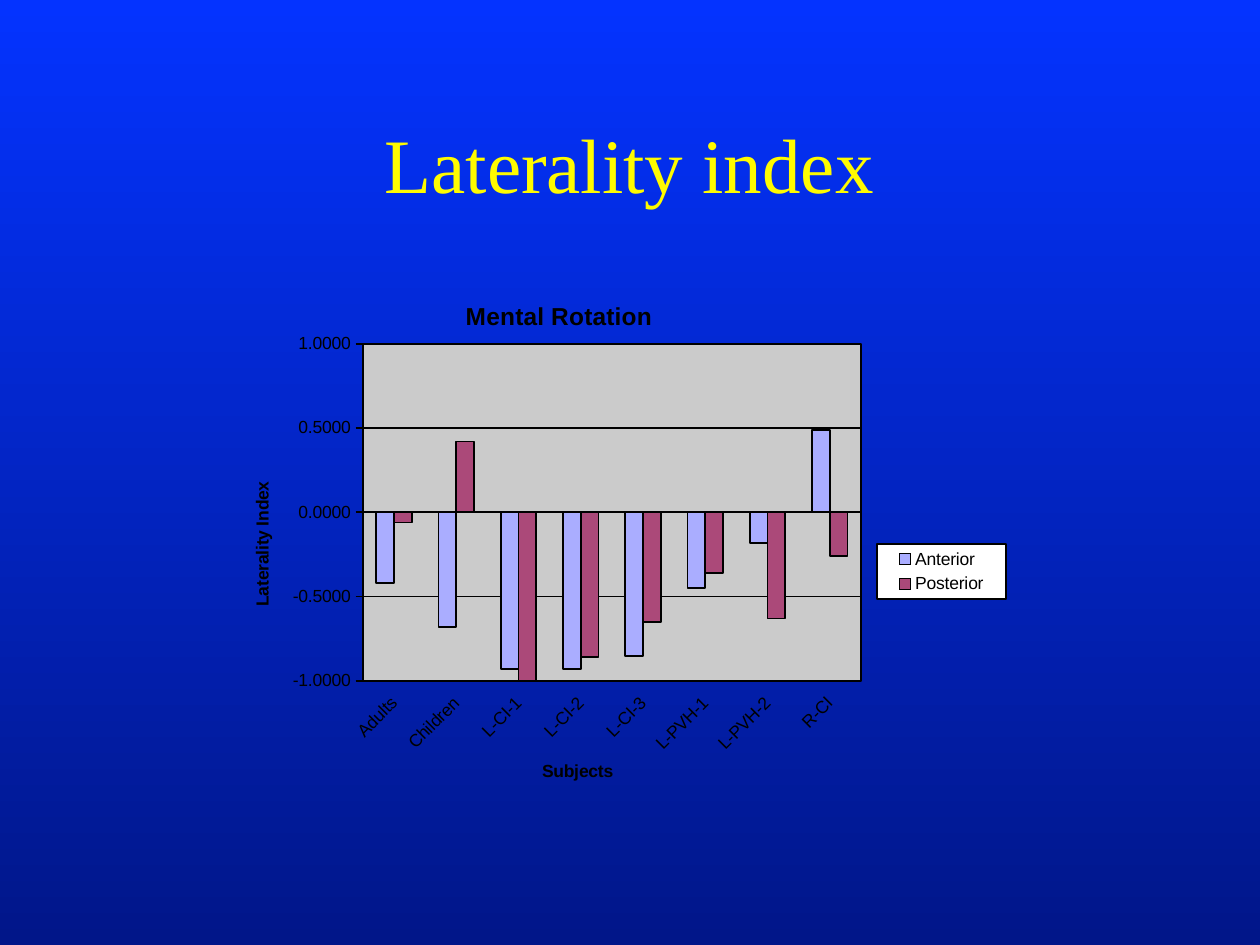
import dataclasses

import lxml.etree
import pptx
import pptx.chart.data
import pptx.dml.color
import pptx.enum.chart
import pptx.enum.text
import pptx.oxml.ns
import pptx.util

Cm = pptx.util.Cm
Pt = pptx.util.Pt
qn = pptx.oxml.ns.qn


@dataclasses.dataclass(frozen=True)
class Theme:
    background_bottom: str = "011689"
    background_top: str = "0433FF"
    heading: str = "FFFB00"
    ink: str = "000000"
    plot: str = "CBCBCB"
    legend: str = "FFFFFF"
    series: tuple = ("AAADFF", "AB4979")
    heading_font: str = "Times New Roman"
    chart_font: str = "Arial"
    heading_size: int = 44
    chart_title_size: int = 14
    label_size: int = 10
    line_width: int = 1


THEME = Theme()
SUBJECTS = ["Adults", "Children", "L-CI-1", "L-CI-2", "L-CI-3",
            "L-PVH-1", "L-PVH-2", "R-CI"]
LATERALITY = {
    "Anterior": [-0.42, -0.68, -0.93, -0.93, -0.85, -0.45, -0.18, 0.49],
    "Posterior": [-0.06, 0.42, -1, -0.86, -0.65, -0.36, -0.63, -0.26],
}


def rgb(value):
    return pptx.dml.color.RGBColor.from_string(value)


def style_font(font, size, color=THEME.ink, name=THEME.chart_font, bold=False):
    font.size = Pt(size)
    font.name = name
    font.bold = bold
    font.color.rgb = rgb(color)


def style_line(line):
    line.color.rgb = rgb(THEME.ink)
    line.width = Pt(THEME.line_width)


def set_layout(element, box, place, inner=False):
    """Place a chart part by lengths from the corner of the chart's box."""
    for old in element.findall(qn("c:layout")):
        element.remove(old)
    layout = lxml.etree.Element(qn("c:layout"))
    manual = lxml.etree.SubElement(layout, qn("c:manualLayout"))
    settings = {"layoutTarget": "inner"} if inner else {}
    settings.update(xMode="edge", yMode="edge")
    for position, (tag, length) in enumerate(zip("xywh", place)):
        settings[tag] = length / box[2 + position % 2]
    for tag, value in settings.items():
        lxml.etree.SubElement(manual, qn("c:" + tag), val=str(value))
    overlay = element.find(qn("c:overlay"))
    if overlay is None:
        element.insert(0, layout)
    else:
        overlay.addprevious(layout)


def filled_outline(color):
    """Shape properties with a solid fill and a thin dark outline."""
    properties = lxml.etree.Element(qn("c:spPr"))
    outline = lxml.etree.Element(qn("a:ln"), w=str(Pt(THEME.line_width)))
    for parent, value in ((properties, color), (outline, THEME.ink)):
        fill = lxml.etree.SubElement(parent, qn("a:solidFill"))
        lxml.etree.SubElement(fill, qn("a:srgbClr"), val=value)
    properties.append(outline)
    return properties


def set_title(title, text, size, box, place, rotation=0):
    title.text_frame.text = text
    style_font(title.text_frame.paragraphs[0].runs[0].font, size, bold=True)
    element = title._element
    body = element.find(".//" + qn("a:bodyPr"))
    body.set("rot", str(rotation * 60000))
    body.set("vert", "horz")
    set_layout(element, box, place)


def style_axes(chart, box):
    marks = pptx.enum.chart.XL_TICK_MARK
    subjects, index = chart.category_axis, chart.value_axis
    for axis in (subjects, index):
        style_font(axis.tick_labels.font, THEME.label_size)
        style_line(axis.format.line)
        axis.minor_tick_mark = marks.NONE
    set_title(subjects.axis_title, "Subjects", THEME.label_size,
              box, (Cm(5.91), Cm(9.27)))
    set_title(index.axis_title, "Laterality Index", THEME.label_size,
              box, (Cm(0.03), Cm(3.67)), rotation=-90)

    subjects.major_tick_mark = marks.NONE
    subjects.tick_label_position = pptx.enum.chart.XL_TICK_LABEL_POSITION.LOW
    labels = subjects._element.find(qn("c:txPr")).find(qn("a:bodyPr"))
    labels.set("rot", str(-45 * 60000))
    labels.set("vert", "horz")

    index.major_tick_mark = marks.OUTSIDE
    index.minimum_scale, index.maximum_scale, index.major_unit = -1, 1, 0.5
    index.tick_labels.number_format = "0.0000"
    index.tick_labels.number_format_is_linked = False
    index.has_major_gridlines = True
    style_line(index.major_gridlines.format.line)


def add_legend(chart, box):
    chart.has_legend = True
    legend = chart.legend
    legend.position = pptx.enum.chart.XL_LEGEND_POSITION.RIGHT
    legend.include_in_layout = True
    style_font(legend.font, THEME.label_size)
    set_layout(legend._element, box, (Cm(12.74), Cm(5), Cm(2.6), Cm(1.11)))
    overlay = legend._element.find(qn("c:overlay"))
    overlay.addnext(filled_outline(THEME.legend))


def add_heading(page, box):
    frame = page.shapes.add_textbox(*box).text_frame
    frame.word_wrap = True
    frame.vertical_anchor = pptx.enum.text.MSO_ANCHOR.MIDDLE
    frame.margin_left = frame.margin_right = Cm(0.15)
    frame.margin_top = frame.margin_bottom = Cm(0.15)
    frame.text = "Laterality index"
    para = frame.paragraphs[0]
    para.alignment = pptx.enum.text.PP_ALIGN.CENTER
    style_font(para.runs[0].font, THEME.heading_size, THEME.heading,
               THEME.heading_font)


def add_laterality_chart(page, box):
    data = pptx.chart.data.CategoryChartData()
    data.categories = SUBJECTS
    for name, values in LATERALITY.items():
        data.add_series(name, values)
    kind = pptx.enum.chart.XL_CHART_TYPE.COLUMN_CLUSTERED
    chart = page.shapes.add_chart(kind, *box, data).chart
    style_font(chart.font, THEME.label_size)

    # Title, axes and legend
    chart.has_title = True
    set_title(chart.chart_title, "Mental Rotation", THEME.chart_title_size,
              box, (Cm(4.34), Cm(0)))
    chart.chart_title._element.find(qn("c:overlay")).set("val", "1")
    style_axes(chart, box)
    add_legend(chart, box)

    # Columns
    plot = chart.plots[0]
    plot.gap_width = 150
    plot.overlap = 0
    plot.vary_by_categories = False
    for series, color in zip(plot.series, THEME.series):
        series.invert_if_negative = False
        series.format.fill.solid()
        series.format.fill.fore_color.rgb = rgb(color)
        style_line(series.format.line)

    # Plot area
    area = chart._chartSpace.find(".//" + qn("c:plotArea"))
    set_layout(area, box, (Cm(2.36), Cm(0.96), Cm(10.05), Cm(6.8)), inner=True)
    area.append(filled_outline(THEME.plot))


def paint_background(page):
    fill = page.background.fill
    fill.gradient()
    fill.gradient_angle = 90
    colors = (THEME.background_bottom, THEME.background_top)
    for stop, color, position in zip(fill.gradient_stops, colors, (0, 1)):
        stop.color.rgb = rgb(color)
        stop.position = position


def main():
    deck = pptx.Presentation()
    deck.slide_width, deck.slide_height = Cm(25.4), Cm(19.05)
    page = deck.slides.add_slide(deck.slide_layouts[6])
    paint_background(page)
    add_heading(page, (Cm(1.9), Cm(1.05), Cm(21.59), Cm(4.45)))
    add_laterality_chart(page, (Cm(4.96), Cm(5.97), Cm(15.34), Cm(9.88)))
    deck.save("out.pptx")


if __name__ == "__main__":
    main()
